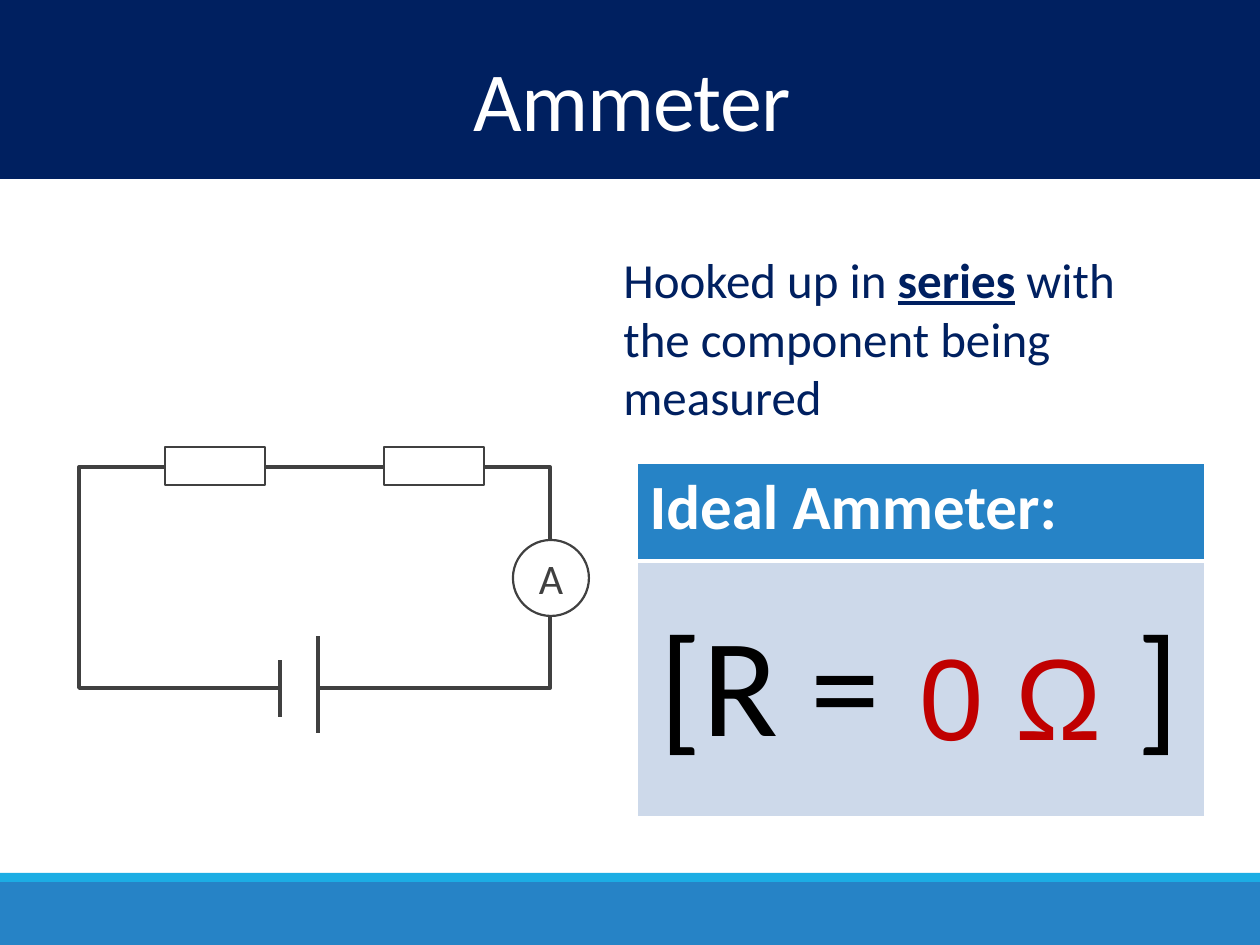
from lxml import etree
from pptx import Presentation
from pptx import util as u
from pptx.dml.color import RGBColor
from pptx.enum import shapes, text
from pptx.oxml.ns import qn

PX = 914400 // 126
COLORS = {
    "navy": "002060", "blue": "2683C6", "cyan": "1CADE4", "pale": "CDD9EA",
    "ink": "404040", "white": "FFFFFF", "black": "000000", "red": "C00000",
}
TITLE = "Ammeter"
SENTENCE = [("Hooked up in ", False), ("series", True),
            (" with the component being measured", False)]
HEADING = "Ideal Ammeter:"
FORMULA = "[R =\t]"
ANSWER = "0 Ω"
BANDS = [((0, 882, 1260, 63), "blue"), ((0, 873, 1260, 9), "cyan"),
         ((0, 0, 1260, 179), "navy")]
LOOP = (79, 467, 471, 221)
BATTERY_GAP = (280, 673, 38, 33)
PLATES = [(318, 636, 733), (280, 660, 717)]
RESISTORS = [(165, 447, 100, 38), (384, 447, 100, 38)]
METER = (513, 540, 76, 76)
TABLE = (637, 463, 568, 354)
ROWS = [98, 256]
FORMULA_MARGIN, BRACKET_STOP = 23, 477


def emu(lengths):
    return [length * PX for length in lengths]


def color(name):
    return RGBColor.from_string(COLORS[name])


def add_shape(page, kind, frame, fill=None, line=None, width=1.25):
    shape = page.shapes.add_shape(kind, *emu(frame))
    shape.shadow.inherit = False
    if fill:
        shape.fill.solid()
        shape.fill.fore_color.rgb = color(fill)
    else:
        shape.fill.background()
    if line:
        shape.line.color.rgb = color(line)
        shape.line.width = u.Pt(width)
    else:
        shape.line.fill.background()
    return shape


def style(span, size, ink, bold=False, font="Calibri"):
    span.font.size = u.Pt(size)
    span.font.name = font
    span.font.bold = bold
    span.font.color.rgb = color(ink)


def add_plate(page, x, top, bottom):
    plate = page.shapes.add_connector(
        shapes.MSO_CONNECTOR.STRAIGHT, *emu((x, bottom, x, top)))
    plate.line.color.rgb = color("ink")
    plate.line.width = u.Pt(2.25)
    etree.SubElement(plate.element.spPr, qn("a:effectLst"))


def set_cell(cell, words, size, ink, fill, bold, bottom):
    cell.text_frame.text = words
    style(cell.text_frame.paragraphs[0].runs[0], size, ink, bold)
    properties = cell._tc.get_or_add_tcPr()
    for side, points in (("L", 1), ("R", 1), ("T", 1), ("B", bottom)):
        border = etree.SubElement(properties, qn("a:ln" + side), w=str(u.Pt(points)))
        paint = etree.SubElement(border, qn("a:solidFill"))
        etree.SubElement(paint, qn("a:srgbClr"), val=COLORS["white"])
    cell.fill.solid()
    cell.fill.fore_color.rgb = color(fill)


def add_title(page):
    title = page.shapes.title
    title.left, title.top, title.width, title.height = emu((4, 53, 1256, 106))
    frame = title.text_frame
    frame.text = TITLE
    frame.auto_size = text.MSO_AUTO_SIZE.NONE
    frame.vertical_anchor = text.MSO_ANCHOR.MIDDLE
    para = frame.paragraphs[0]
    para.alignment = text.PP_ALIGN.CENTER
    para.line_spacing = 0.85
    style(para.runs[0], 48, "white")
    para.runs[0].font._element.set("spc", "-50")


def add_circuit(page):
    rectangle = shapes.MSO_SHAPE.RECTANGLE
    add_shape(page, rectangle, LOOP, line="ink", width=2.25)
    add_shape(page, rectangle, BATTERY_GAP, fill="white")
    for plate in PLATES:
        add_plate(page, *plate)
    for frame in RESISTORS:
        add_shape(page, rectangle, frame, "white", "ink")
    meter = add_shape(page, shapes.MSO_SHAPE.OVAL, METER, "white", "ink")
    meter.text_frame.text = "A"
    meter.text_frame.vertical_anchor = text.MSO_ANCHOR.MIDDLE
    para = meter.text_frame.paragraphs[0]
    para.alignment = text.PP_ALIGN.CENTER
    style(para.runs[0], 24, "ink")


def add_sentence(page):
    box = page.shapes.add_textbox(*emu((611, 243, 590, 131)))
    box.text_frame.word_wrap = True
    para = box.text_frame.paragraphs[0]
    for words, stressed in SENTENCE:
        span = para.add_run()
        span.text = words
        style(span, 28, "navy", stressed)
        span.font.underline = stressed


def add_ideal_table(page):
    table = page.shapes.add_table(2, 1, *emu(TABLE)).table
    for row, height in zip(table.rows, ROWS):
        row.height = height * PX
    set_cell(table.cell(0, 0), HEADING, 36, "white", "blue", True, 3)
    formula = table.cell(1, 0)
    set_cell(formula, FORMULA, 80, "black", "pale", False, 1)
    formula.vertical_anchor = text.MSO_ANCHOR.MIDDLE
    formula.margin_left = FORMULA_MARGIN * PX
    properties = formula.text_frame.paragraphs[0]._p.get_or_add_pPr()
    stops = etree.SubElement(properties, qn("a:tabLst"))
    etree.SubElement(stops, qn("a:tab"), pos=str(BRACKET_STOP * PX), algn="l")


def add_answer(page):
    box = page.shapes.add_textbox(*emu((907, 619, 209, 152)))
    box.text_frame.word_wrap = False
    box.text_frame.text = ANSWER
    style(box.text_frame.paragraphs[0].runs[0], 66, "red", font="Arial")


def main():
    deck = Presentation()
    deck.slide_width, deck.slide_height = emu((1260, 945))
    page = deck.slides.add_slide(deck.slide_layouts[5])
    for frame, fill in BANDS:
        add_shape(page, shapes.MSO_SHAPE.RECTANGLE, frame, fill)
    page.shapes._spTree.append(page.shapes.title.element)
    add_title(page)
    add_circuit(page)
    add_sentence(page)
    add_ideal_table(page)
    add_answer(page)
    deck.save("out.pptx")


if __name__ == "__main__":
    main()
